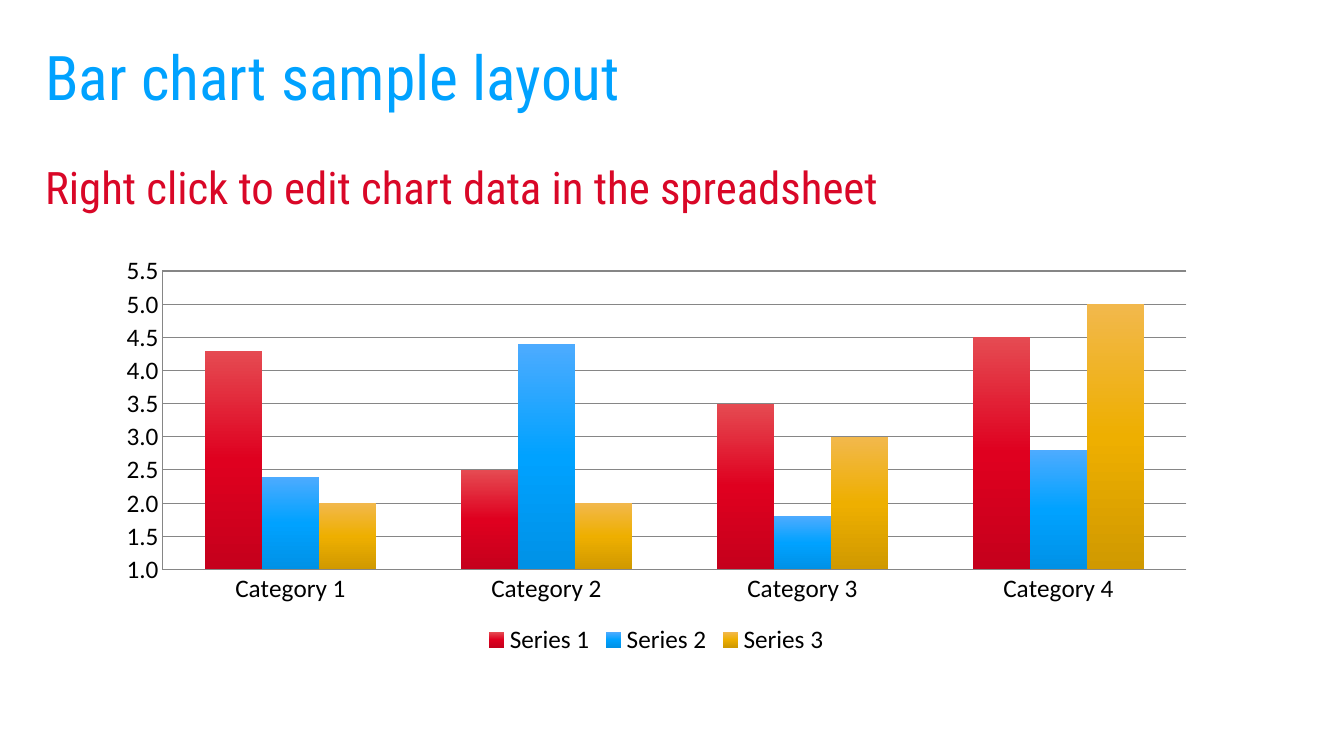
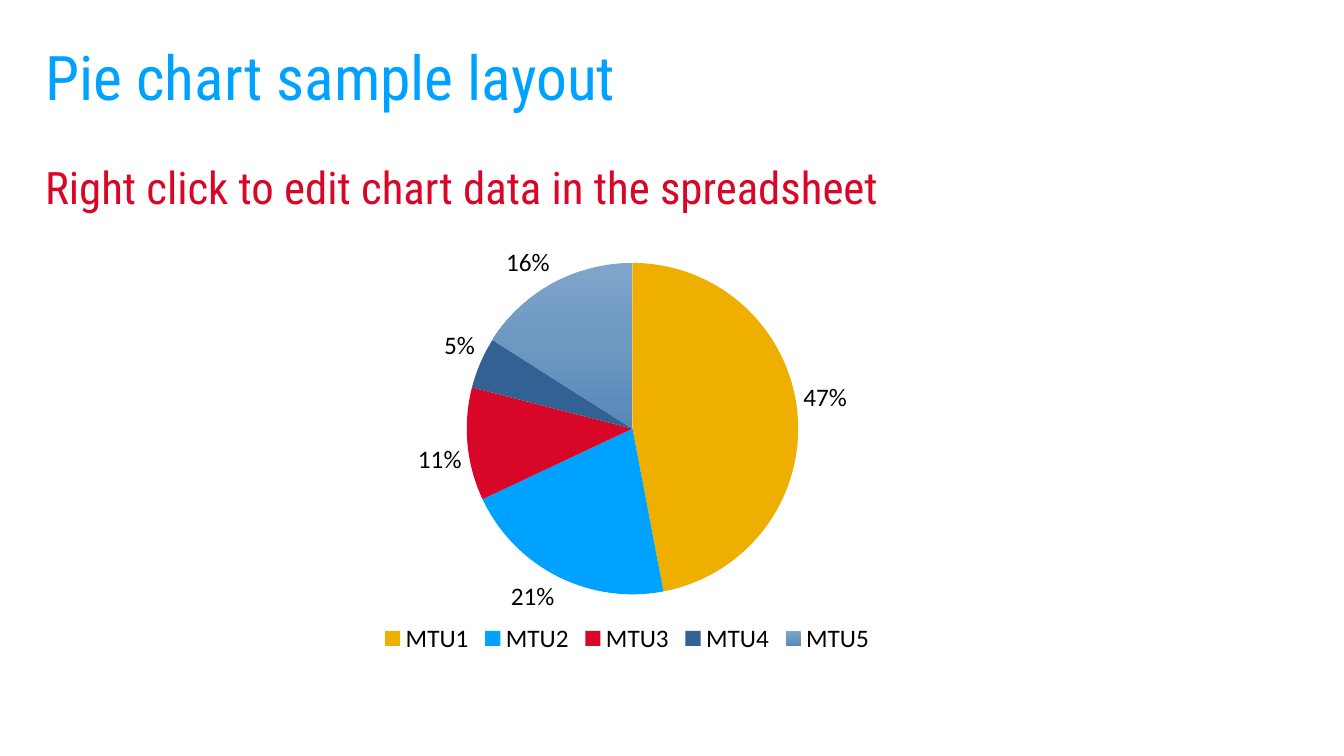
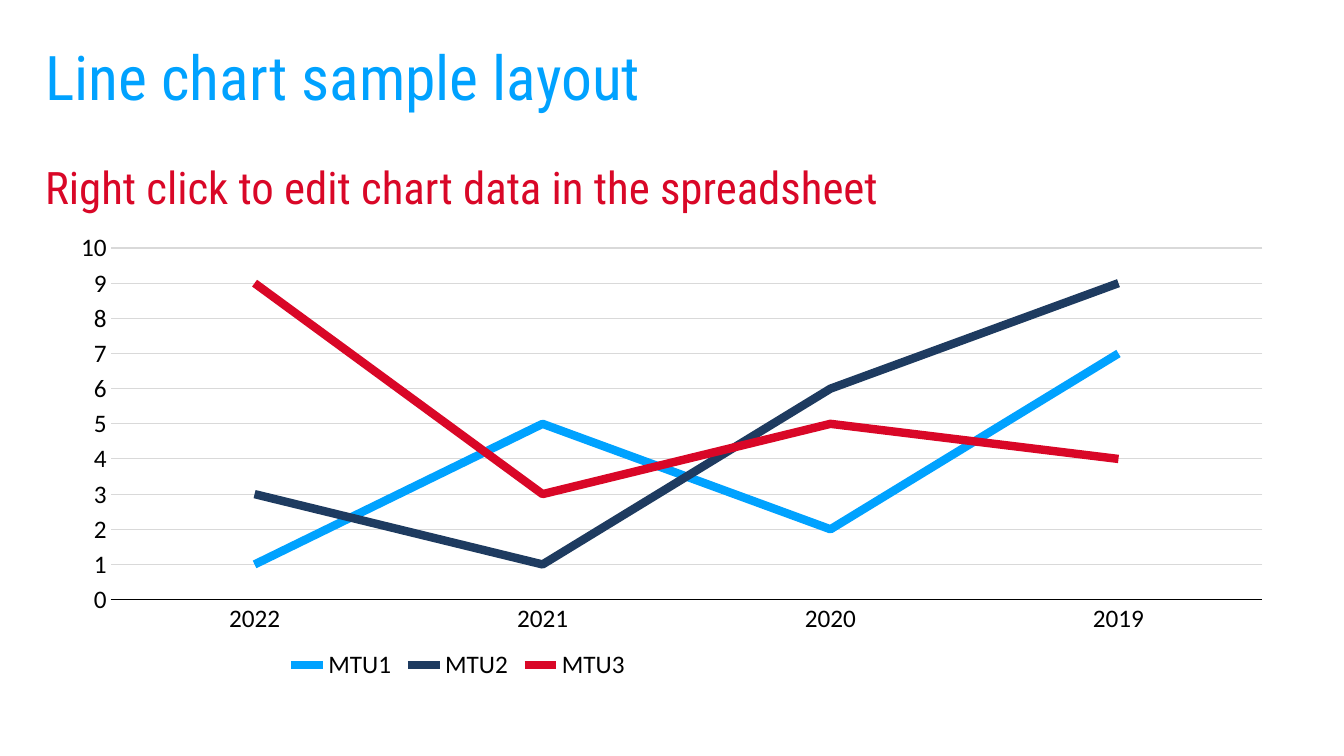
from dataclasses import dataclass

from lxml import etree
from pptx import Presentation
from pptx.chart.data import CategoryChartData
from pptx.dml.color import RGBColor
from pptx.enum import chart as ch, text as tx
from pptx.oxml.ns import qn
from pptx.util import Pt


@dataclass(frozen=True)
class Theme:
    blue: str = "00A2FF"
    red: str = "D90727"
    gold: str = "EEAF00"
    steel: str = "326194"
    navy: str = "1E3B60"
    black: str = "000000"
    grey: str = "868686"
    pale: str = "D9D9D9"
    # Gradients run from top to bottom.
    red_fade: tuple = ("E54B52", "DF001F", "C5001C")
    blue_fade: tuple = ("4DABFF", "00A2FF", "0091E6")
    gold_fade: tuple = ("F2B84C", "EEAF00", "D09900")
    steel_fade: tuple = ("80A5CB", "6C98C1", "5987B8")
    head_font: str = "Roboto Condensed"
    chart_font: str = "Calibri"
    title_size: int = 44
    subtitle_size: int = 32
    chart_size: int = 18


THEME = Theme()
SUBTITLE = "Right click to edit chart data in the spreadsheet"


def paint(fill, colour):
    """Fill with one colour, or with a vertical gradient for a tuple."""
    if isinstance(colour, str):
        fill.solid()
        fill.fore_color.rgb = RGBColor.from_string(colour)
        return
    fill.gradient()
    fill.gradient_angle = 270
    stops = fill.gradient_stops[0]._gs.getparent()
    for stop in list(stops):
        stops.remove(stop)
    for index, shade in enumerate(colour):
        position = round(100000 * index / (len(colour) - 1))
        stop = etree.SubElement(stops, qn("a:gs"), pos=str(position))
        etree.SubElement(stop, qn("a:srgbClr"), val=shade)


def draw_line(line, colour, width=0.75):
    line.color.rgb = RGBColor.from_string(colour)
    line.width = Pt(width)


def manual_layout(**fractions):
    """Layout element from fractions (x, y, w, h) of the chart area."""
    layout = etree.Element(qn("c:layout"))
    manual = etree.SubElement(layout, qn("c:manualLayout"))
    if "w" in fractions:
        etree.SubElement(manual, qn("c:layoutTarget"), val="inner")
    for side in "xy":
        etree.SubElement(manual, qn(f"c:{side}Mode"), val="edge")
    for side, value in fractions.items():
        etree.SubElement(manual, qn(f"c:{side}"), val=str(value))
    return layout


def drop_layout(parent):
    for old in parent.findall(qn("c:layout")):
        parent.remove(old)


class Deck:
    def __init__(self, theme):
        self.theme = theme
        self.presentation = Presentation()
        self.presentation.slide_width = Pt(960)
        self.presentation.slide_height = Pt(540)
        self.slide = None

    def new_slide(self, title):
        theme = self.theme
        blank = self.presentation.slide_layouts[6]
        self.slide = self.presentation.slides.add_slide(blank)
        self.heading(title, (25.2, 0, 680.4, 115.2), theme.title_size,
                     theme.blue, tx.MSO_ANCHOR.MIDDLE)
        self.heading(SUBTITLE, (25.2, 115.2, 869, 44), theme.subtitle_size,
                     theme.red, tx.MSO_ANCHOR.TOP)

    def heading(self, words, box, size, colour, anchor):
        frame = self.slide.shapes.add_textbox(*map(Pt, box)).text_frame
        frame.word_wrap = True
        frame.vertical_anchor = anchor
        frame.text = words
        paragraph = frame.paragraphs[0]
        paragraph.line_spacing = 0.9
        font = paragraph.runs[0].font
        font.name = self.theme.head_font
        font.size = Pt(size)
        font.color.rgb = RGBColor.from_string(colour)

    def chart(self, kind, box, categories, series, plot, legend=None):
        """Add a chart; plot and legend give fractions of its area."""
        data = CategoryChartData()
        data.categories = categories
        for name, values in series.items():
            data.add_series(name, values)
        chart = self.slide.shapes.add_chart(kind, *map(Pt, box), data).chart
        chart.has_title = False
        chart.font.name = self.theme.chart_font
        chart.font.size = Pt(self.theme.chart_size)
        chart.font.color.rgb = RGBColor.from_string(self.theme.black)
        chart.plots[0].vary_by_categories = kind == ch.XL_CHART_TYPE.PIE
        chart.has_legend = True
        chart.legend.position = ch.XL_LEGEND_POSITION.BOTTOM
        chart.legend.include_in_layout = False
        area = chart._chartSpace.chart.plotArea
        drop_layout(area)
        area.insert(0, manual_layout(**plot))
        if legend:
            key = chart.legend._element
            drop_layout(key)
            key.find(qn("c:legendPos")).addnext(manual_layout(**legend))
        return chart

    def axes(self, chart, low, high, step, number_format, base, grid):
        for axis in (chart.category_axis, chart.value_axis):
            axis.major_tick_mark = ch.XL_TICK_MARK.NONE
            axis.minor_tick_mark = ch.XL_TICK_MARK.NONE
        draw_line(chart.category_axis.format.line, base)
        values = chart.value_axis
        values.minimum_scale, values.maximum_scale = low, high
        values.major_unit = step
        values.tick_labels.number_format = number_format
        values.tick_labels.number_format_is_linked = False
        values.has_major_gridlines = True
        draw_line(values.major_gridlines.format.line, grid)

    def save(self):
        self.presentation.save("out.pptx")


def bar_slide(deck):
    theme = deck.theme
    deck.new_slide("Bar chart sample layout")
    chart = deck.chart(
        ch.XL_CHART_TYPE.COLUMN_CLUSTERED, (74.2, 177.1, 789.1, 294.5),
        [f"Category {number}" for number in range(1, 5)],
        {"Series 1": (4.3, 2.5, 3.5, 4.5),
         "Series 2": (2.4, 4.4, 1.8, 2.8),
         "Series 3": (2, 2, 3, 5)},
        plot=dict(x=0.053, y=0.056, w=0.927, h=0.724))
    deck.axes(chart, 1, 5.5, 0.5, "#,##0.0", theme.grey, theme.grey)
    draw_line(chart.value_axis.format.line, theme.grey)
    bars = chart.plots[0]
    bars.gap_width = 150
    bars.overlap = 0
    fades = (theme.red_fade, theme.blue_fade, theme.gold_fade)
    for series, fade in zip(bars.series, fades):
        paint(series.format.fill, fade)


def pie_slide(deck):
    theme = deck.theme
    deck.new_slide("Pie chart sample layout")
    chart = deck.chart(
        ch.XL_CHART_TYPE.PIE, (45.4, 159.8, 813.6, 327.6),
        [f"MTU{number}" for number in range(1, 6)],
        {"Series 1": (47, 21, 11, 5, 16)},
        plot=dict(x=0.354, y=0.085, w=0.291, h=0.724),
        legend=dict(x=0.275, y=0.86))
    pie = chart.plots[0]
    colours = (theme.gold, theme.blue, theme.red, theme.steel,
               theme.steel_fade)
    for index, colour in enumerate(colours):
        paint(pie.series[0].points[index].format.fill, colour)
    pie.has_data_labels = True
    labels = pie.data_labels
    labels.show_value = False
    labels.show_percentage = True
    labels.number_format = "0%"
    labels.number_format_is_linked = False
    labels.position = ch.XL_LABEL_POSITION.OUTSIDE_END


def line_slide(deck):
    theme = deck.theme
    deck.new_slide("Line chart sample layout")
    chart = deck.chart(
        ch.XL_CHART_TYPE.LINE, (40.3, 159.8, 879.1, 334.1),
        ["2022", "2021", "2020", "2019"],
        {"MTU1": (1, 5, 2, 7), "MTU2": (3, 1, 6, 9), "MTU3": (9, 3, 5, 4)},
        plot=dict(x=0.044, y=0.052, w=0.936, h=0.752),
        legend=dict(x=0.184, y=0.9))
    deck.axes(chart, 0, 10, 1, "General", theme.black, theme.pale)
    chart.value_axis.format.line.fill.background()
    colours = (theme.blue, theme.navy, theme.red)
    for series, colour in zip(chart.plots[0].series, colours):
        draw_line(series.format.line, colour, 6)
        series.smooth = False
        series.marker.style = ch.XL_MARKER_STYLE.NONE


def main():
    deck = Deck(THEME)
    for build in (bar_slide, pie_slide, line_slide):
        build(deck)
    deck.save()


if __name__ == "__main__":
    main()
